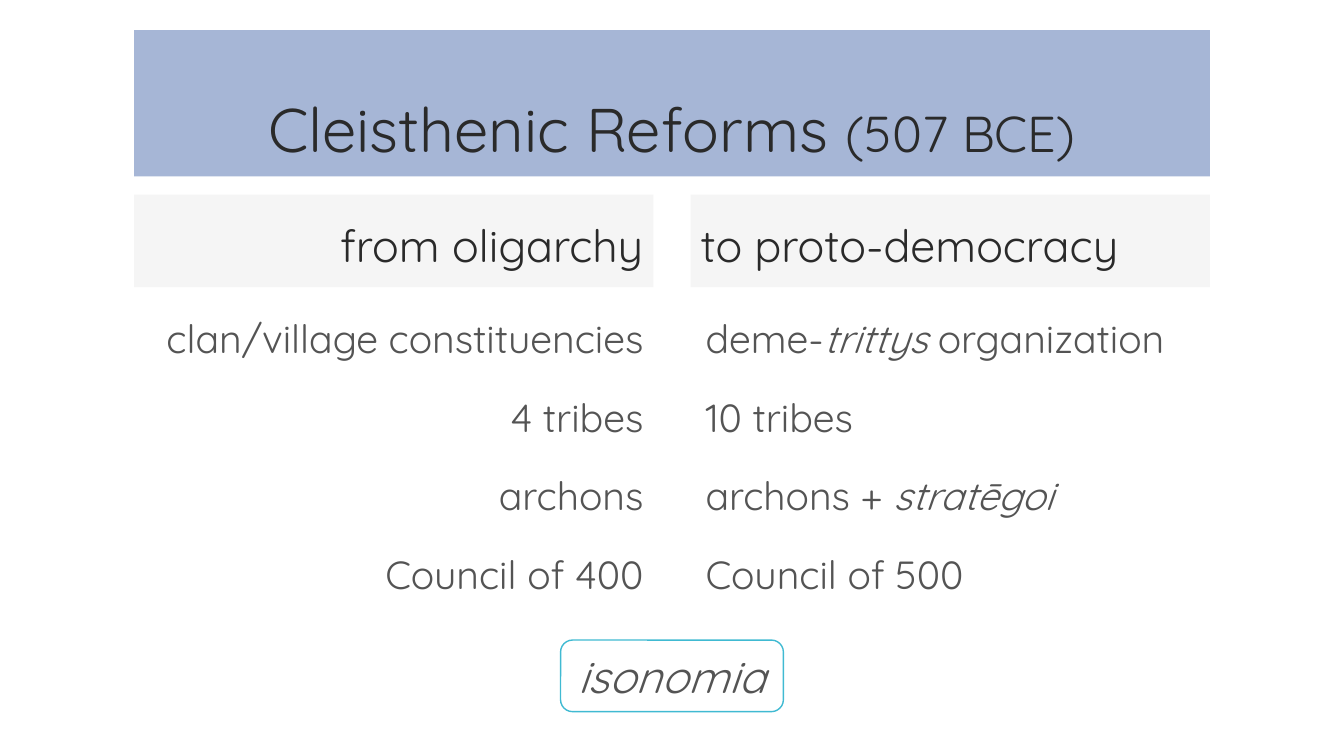
from lxml import etree
from pptx import Presentation
from pptx import util as u
from pptx.dml.color import RGBColor
from pptx.enum import shapes, text
from pptx.oxml.ns import qn

BLUE = RGBColor(0xA6, 0xB6, 0xD6)
GREY = RGBColor(0xBF, 0xBF, 0xBF)
WHITE = RGBColor(0xFF, 0xFF, 0xFF)
TEAL = RGBColor(0x40, 0xBA, 0xD2)
INK = RGBColor(0x2A, 0x2A, 0x2A)
SOFT = RGBColor(0x54, 0x54, 0x54)
LEFT, RIGHT, MID = text.PP_ALIGN.LEFT, text.PP_ALIGN.RIGHT, text.PP_ALIGN.CENTER

COLUMNS = [
    (1.33, 1.12, RIGHT, "from oligarchy", [
        [("clan/village constituencies", False)],
        [("4 tribes", False)],
        [("archons", False)],
        [("Council of 400", False)],
    ]),
    (6.85, 6.85, LEFT, "to proto-democracy", [
        [("deme-", False), ("trittys", True), (" organization", False)],
        [("10 tribes", False)],
        [("archons + ", False), ("stratēgoi", True)],
        [("Council of 500", False)],
    ]),
]


def put(item, **vals):
    for key, val in vals.items():
        setattr(item, key, val)


def place(shape, left, top, width, height):
    put(shape, left=u.Inches(left), top=u.Inches(top),
        width=u.Inches(width), height=u.Inches(height))


def paint(shape, color):
    shape.fill.solid()
    shape.fill.fore_color.rgb = color


def write(para, words, size, color, italic=False):
    run = para.add_run()
    run.text = words
    put(run.font, name="Quicksand", size=u.Pt(size), italic=italic)
    run.font.color.rgb = color


def banner(slide, box):
    title = slide.shapes.title
    place(title, *box)
    paint(title, BLUE)
    frame = title.text_frame
    put(frame, vertical_anchor=text.MSO_ANCHOR.BOTTOM, word_wrap=True,
        auto_size=text.MSO_AUTO_SIZE.NONE,
        margin_left=u.Inches(0.2), margin_right=u.Inches(0.2),
        margin_top=u.Inches(0.1), margin_bottom=u.Inches(0.1))
    para = frame.paragraphs[0]
    put(para, alignment=MID, line_spacing=0.9)
    write(para, "Cleisthenic Reforms ", 44, INK)
    write(para, "(507 BCE)", 36, INK)


def header(slide, box, words, align):
    shape = slide.shapes.add_shape(
        shapes.MSO_SHAPE.RECTANGLE, *map(u.Inches, box))
    shape.shadow.inherit = False
    shape.line.fill.background()
    paint(shape, GREY)
    tint = shape.fill._xPr.find(qn("a:solidFill"))[0]
    etree.SubElement(tint, qn("a:alpha"), val="15000")
    put(shape.text_frame, vertical_anchor=text.MSO_ANCHOR.MIDDLE, word_wrap=True)
    para = shape.text_frame.paragraphs[0]
    put(para, alignment=align, line_spacing=1.14)
    write(para, words, 32, INK)


def points(slide, box, rows, align):
    frame = slide.shapes.add_textbox(*map(u.Inches, box)).text_frame
    frame.word_wrap = True
    for num, row in enumerate(rows):
        para = frame.add_paragraph() if num else frame.paragraphs[0]
        put(para, alignment=align, line_spacing=1.14, space_before=u.Pt(18))
        props = para._p.get_or_add_pPr()
        props.set("marL", str(u.Inches(0.05)))
        props.set("indent", "0")
        for words, italic in row:
            write(para, words, 28, SOFT, italic)


def column(slide, left, start, align, head, rows):
    edge = left + 5.15
    header(slide, (left, 1.93, 5.15, 0.92), head, align)
    points(slide, (start, 3, edge - start, 3.58), rows, align)


def badge(slide, box):
    shape = slide.shapes.add_shape(
        shapes.MSO_SHAPE.ROUNDED_RECTANGLE, *map(u.Inches, box))
    shape.shadow.inherit = False
    paint(shape, WHITE)
    shape.line.color.rgb = TEAL
    shape.line.width = u.Pt(1)
    put(shape.text_frame, vertical_anchor=text.MSO_ANCHOR.MIDDLE,
        word_wrap=False, auto_size=text.MSO_AUTO_SIZE.SHAPE_TO_FIT_TEXT)
    para = shape.text_frame.paragraphs[0]
    para.alignment = MID
    write(para, "isonomia", 32, SOFT, True)


def main():
    deck = Presentation()
    put(deck, slide_width=u.Inches(13.33), slide_height=u.Inches(7.5))
    slide = deck.slides.add_slide(deck.slide_layouts[5])
    banner(slide, (1.33, 0.3, 10.67, 1.45))
    for col in COLUMNS:
        column(slide, *col)
    badge(slide, (5.56, 6.35, 2.21, 0.71))
    deck.save("out.pptx")


if __name__ == "__main__":
    main()
